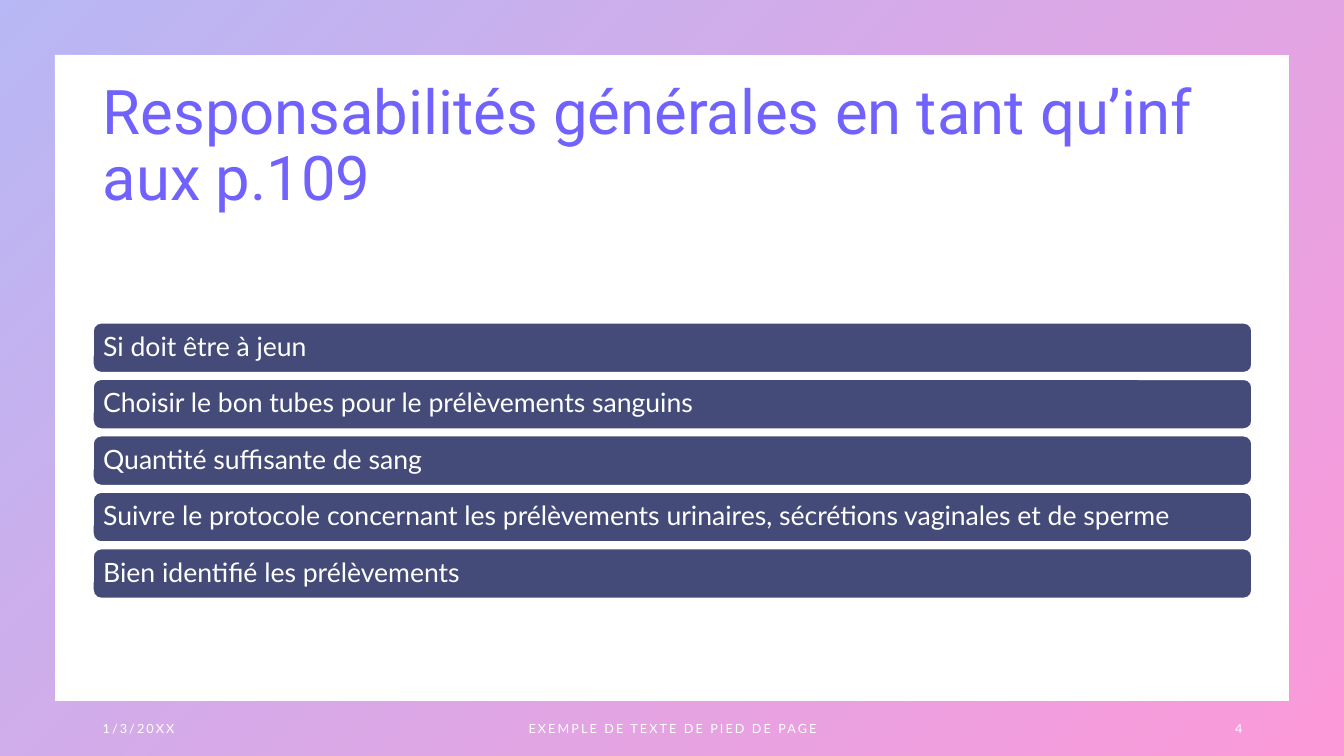
import pptx
import pptx.util
import pptx.dml.color
import pptx.enum.shapes
import pptx.enum.text
import pptx.oxml
import pptx.oxml.ns

Inches, Pt = pptx.util.Inches, pptx.util.Pt
RGB = pptx.dml.color.RGBColor.from_string
SHAPE = pptx.enum.shapes.MSO_SHAPE
ALIGN = pptx.enum.text.PP_ALIGN
qn = pptx.oxml.ns.qn

COLORS = {"white": "FFFFFF", "bar": "454B78", "blue": "4D4EE6",
          "violet": "7162FE", "pink": "F900A0"}


def set_gradient(fill, element, angle, *stops):
    """Fill with (color name, opacity percent) stops; element holds the fill's XML."""
    fill.gradient()
    fill.gradient_angle = angle
    for stop, (color, _) in zip(fill.gradient_stops, stops):
        stop.color.rgb = RGB(COLORS[color])
    for clr, (_, opacity) in zip(element.iter(qn("a:srgbClr")), stops):
        if opacity < 100:
            alpha = clr.makeelement(qn("a:alpha"), {"val": str(opacity * 1000)})
            clr.append(alpha)


def write(shape, text, size, font="Lato", color="white", align=ALIGN.LEFT,
          line=None, after=0, tracking=None, inset=0.1):
    tf = shape.text_frame
    tf.word_wrap = True
    tf.vertical_anchor = pptx.enum.text.MSO_ANCHOR.MIDDLE
    tf.margin_left = tf.margin_right = Inches(inset)
    tf.margin_top = tf.margin_bottom = Inches(0.05)
    p = tf.paragraphs[0]
    p.alignment = align
    p.line_spacing = line
    p.space_after = Pt(after)
    r = p.add_run()
    r.text = text
    r.font.size = Pt(size)
    r.font.name = font
    r.font.color.rgb = RGB(COLORS[color])
    if tracking:
        r.font._element.set("spc", str(int(tracking * 100)))
    return r


prs = pptx.Presentation()
prs.slide_width, prs.slide_height = Inches(13.33), Inches(7.5)
s = prs.slides.add_slide(prs.slide_layouts[6])
s.background.fill.solid()
s.background.fill.fore_color.rgb = RGB(COLORS["white"])

frame = s.shapes.add_shape(SHAPE.FRAME, 0, 0, prs.slide_width, prs.slide_height)
frame.adjustments[0] = 0.072
frame.shadow.inherit = False
frame.line.fill.background()
set_gradient(frame.fill, frame._element.spPr, 315, ("blue", 40), ("pink", 40))

title = s.shapes.add_textbox(Inches(0.92), Inches(0.74), Inches(11.5), Inches(1.45))
r = write(title, "Responsabilités générales en tant qu’inf aux p.109", 44,
          font="Roboto", color="violet", line=0.9)
set_gradient(r.font.fill, r.font._element, 0, ("violet", 100), ("pink", 70))

footers = [
    (0.92, 3, "1/3/20XX", ALIGN.LEFT),
    (4.42, 4.5, "EXEMPLE DE TEXTE DE PIED DE PAGE", ALIGN.CENTER),
    (9.42, 3, "4", ALIGN.RIGHT),
]
for left, width, text, align in footers:
    box = s.shapes.add_textbox(Inches(left), Inches(7.03), Inches(width), Inches(0.4))
    write(box, text, 9, align=align, after=6, tracking=1.5)

duties = [
    "Si doit être à jeun",
    "Choisir le bon tubes pour le prélèvements sanguins",
    "Quantité suffisante de sang",
    "Suivre le protocole concernant les prélèvements urinaires, sécrétions vaginales et de sperme",
    "Bien identifié les prélèvements",
]
for i, duty in enumerate(duties):
    bar = s.shapes.add_shape(SHAPE.ROUNDED_RECTANGLE, Inches(0.92),
                             Inches(3.2 + 0.56 * i), Inches(11.5), Inches(0.5))
    bar.shadow.inherit = False
    bar.fill.solid()
    bar.fill.fore_color.rgb = RGB(COLORS["bar"])
    bar.line.color.rgb = RGB(COLORS["white"])
    bar.line.width = Pt(1.5)
    write(bar, duty, 19, line=0.9, inset=0.08)

prs.save("out.pptx")
